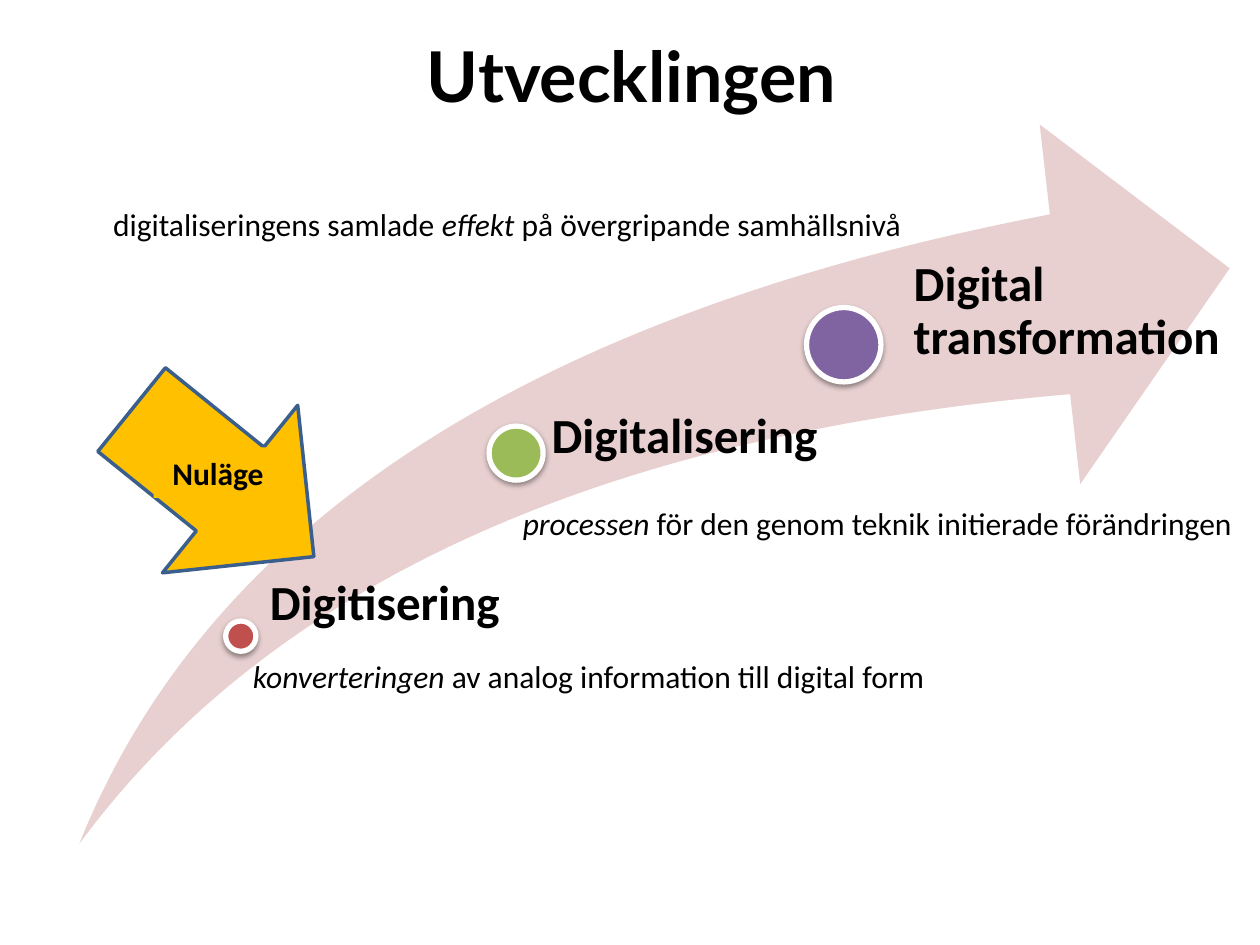
from lxml.etree import SubElement
from pptx import Presentation
from pptx.dml.color import RGBColor
from pptx.enum.shapes import MSO_SHAPE
from pptx.enum.text import MSO_ANCHOR, PP_ALIGN
from pptx.oxml.ns import qn
from pptx.util import Cm, Pt


def rgb(value):
    return RGBColor.from_string(value)


class SlideBuilder:
    font = "Calibri"
    title_font = "Lato"
    ink = "000000"
    pale = "E8D0D0"
    accent = "FFC000"
    accent_line = "3A5F8C"

    def __init__(self, prs):
        self.s = prs.slides.add_slide(prs.slide_layouts[5])

    def set_font(self, p, size, bold=None, name=None):
        p.font.name = name or self.font
        p.font.size = Pt(size)
        p.font.bold = bold
        p.font.color.rgb = rgb(self.ink)

    def title(self, text, box):
        sp = self.s.shapes.title
        sp.left, sp.top, sp.width, sp.height = map(Cm, box)
        tf = sp.text_frame
        tf.text = text
        tf.vertical_anchor = MSO_ANCHOR.MIDDLE
        p = tf.paragraphs[0]
        p.alignment = PP_ALIGN.CENTER
        self.set_font(p, 40, True, self.title_font)

    def shape(self, kind, box, fill, line=None, line_width=0):
        sp = self.s.shapes.add_shape(kind, *map(Cm, box))
        sp.shadow.inherit = False
        sp.fill.solid()
        sp.fill.fore_color.rgb = rgb(fill)
        if line:
            sp.line.color.rgb = rgb(line)
            sp.line.width = Pt(line_width)
        else:
            sp.line.fill.background()
        return sp

    def dot(self, left, top, size, fill):
        """Add a white-rimmed circle with a soft shadow below it."""
        sp = self.shape(MSO_SHAPE.OVAL, (left, top, size, size), fill, "FFFFFF", 3)
        effects = sp._element.spPr.find(qn("a:effectLst"))
        shadow = SubElement(effects, qn("a:outerShdw"), blurRad=str(Pt(3.1)),
                            dist=str(Pt(1.6)), dir="5400000", rotWithShape="0")
        color = SubElement(shadow, qn("a:srgbClr"), val="000000")
        SubElement(color, qn("a:alpha"), val="38000")

    def text_box(self, box, wrap=True):
        tf = self.s.shapes.add_textbox(*map(Cm, box)).text_frame
        tf.word_wrap = wrap
        return tf

    def label(self, text, box, inset):
        tf = self.text_box(box)
        tf.margin_left = Cm(inset)
        tf.margin_top = tf.margin_right = tf.margin_bottom = 0
        tf.text = text
        p = tf.paragraphs[0]
        p.line_spacing = 0.9
        self.set_font(p, 28, True)

    def description(self, runs, box, wrap=True):
        """Add one line of text from (text, italic) pairs."""
        p = self.text_box(box, wrap).paragraphs[0]
        self.set_font(p, 18)
        for text, italic in runs:
            r = p.add_run()
            r.text = text
            r.font.italic = italic

    def tag(self, text, box):
        sp = self.shape(MSO_SHAPE.RECTANGLE, box, self.accent)
        tf = sp.text_frame
        tf.vertical_anchor = MSO_ANCHOR.TOP
        tf.text = text
        p = tf.paragraphs[0]
        p.alignment = PP_ALIGN.CENTER
        self.set_font(p, 18, True)


def main():
    prs = Presentation()
    prs.slide_width, prs.slide_height = Cm(25.4), Cm(19.05)
    b = SlideBuilder(prs)
    b.title("Utvecklingen", (1.3, -0.08, 22.86, 3.18))

    swoosh = b.shape(MSO_SHAPE.SWOOSH_ARROW, (1.6, 2.51, 23.19, 14.5), b.pale)
    swoosh.adjustments[0] = swoosh.adjustments[1] = 0.25

    stages = [
        ("Digitisering", (4.55, 12.52, 0.61, "C0504D"), (5.11, 11.66, 5.41, 4.19), 0.33),
        ("Digitalisering", (9.86, 8.59, 1.09, "9BBB59"), (10.54, 8.28, 7.04, 7.87), 0.58),
        ("Digital transformation", (16.26, 6.2, 1.5, "8064A2"), (17.63, 5.23, 7.42, 8.1), 0.79),
    ]
    for name, dot, box, inset in stages:
        b.dot(*dot)
        b.label(name, box, inset)

    b.description([("konverteringen ", True),
                   ("av analog information till digital form", False)],
                  (4.85, 13.13, 14.25, 1.02), wrap=False)
    b.description([("processen", True),
                   (" för den genom teknik initierade förändringen", False)],
                  (10.29, 10.03, 14.86, 1.02))
    b.description([("digitaliseringens samlade ", False), ("effekt", True),
                   (" på övergripande samhällsnivå", False)],
                  (2.03, 4.01, 19.91, 1.02))

    arrow = b.shape(MSO_SHAPE.RIGHT_ARROW, (2.13, 7.57, 4.72, 4.34),
                    b.accent, b.accent_line, 2)
    arrow.rotation = 38.9
    b.tag("Nuläge", (3.1, 9.02, 2.59, 1.02))

    prs.save("out.pptx")


if __name__ == "__main__":
    main()
